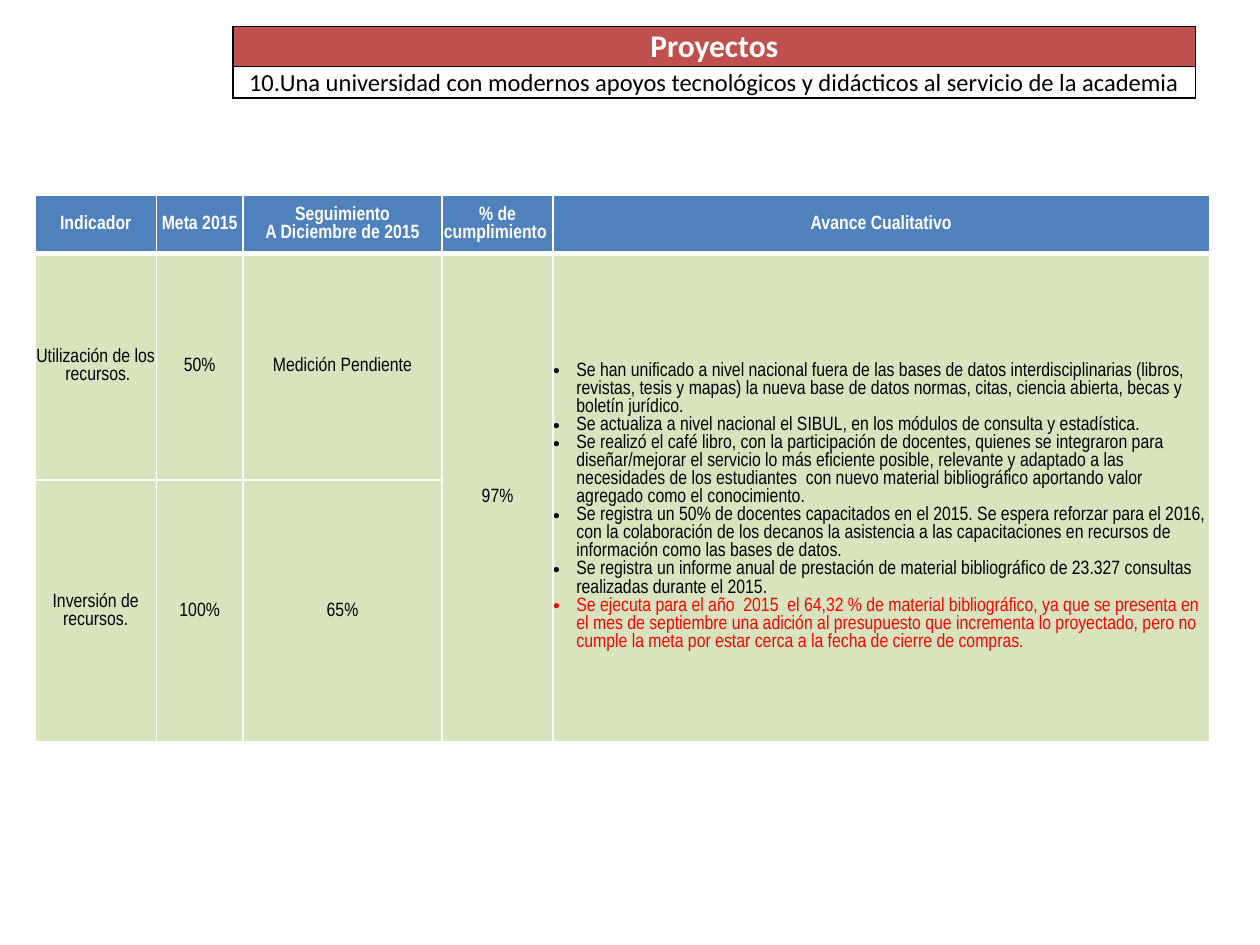
from dataclasses import dataclass

from lxml.etree import SubElement
from pptx import Presentation
from pptx.dml.color import RGBColor
from pptx.enum.text import MSO_ANCHOR as Anchor, PP_ALIGN as Align
from pptx.oxml.ns import qn
from pptx.table import Table, _Cell as Cell
from pptx.util import Cm, Pt

WHITE = RGBColor(0xFF, 0xFF, 0xFF)
BLACK = RGBColor(0x00, 0x00, 0x00)
RED = RGBColor(0xFF, 0x00, 0x00)
BRICK = RGBColor(0xC0, 0x50, 0x4D)
BLUE = RGBColor(0x4F, 0x81, 0xBD)
GREEN = RGBColor(0xD7, 0xE4, 0xBD)

HEADINGS = ["Indicador", "Meta 2015", "Seguimiento\nA Diciembre de 2015",
            "% de cumplimiento ", "Avance Cualitativo"]
ADVANCES = [
    "Se han unificado a nivel nacional fuera de las bases de datos interdisciplinarias "
    "(libros, revistas, tesis y mapas) la nueva base de datos normas, citas, "
    "ciencia abierta, becas y boletín jurídico.",
    "Se actualiza a nivel nacional el SIBUL, en los módulos de consulta y estadística.",
    "Se realizó el café libro, con la participación de docentes, quienes se integraron "
    "para diseñar/mejorar el servicio lo más eficiente posible, relevante y adaptado a las "
    "necesidades de los estudiantes  con nuevo material bibliográfico aportando valor "
    "agregado como el conocimiento.",
    "Se registra un 50% de docentes capacitados en el 2015. Se espera reforzar para el 2016, "
    "con la colaboración de los decanos la asistencia a las capacitaciones en recursos de "
    "información como las bases de datos.",
    "Se registra un informe anual de prestación de material bibliográfico de 23.327 consultas "
    "realizadas durante el 2015.",
    "Se ejecuta para el año  2015  el 64,32 % de material bibliográfico, ya que se presenta en "
    "el mes de septiembre una adición al presupuesto que incrementa lo proyectado, pero no "
    "cumple la meta por estar cerca a la fecha de cierre de compras.",
]
INDICATORS = [
    ["Utilización de los  recursos.", "50%", "Medición Pendiente", "97%", "\n".join(ADVANCES)],
    ["Inversión de recursos.", "100%", "65%"],
]


@dataclass
class CellStyle:
    fill: RGBColor
    color: RGBColor
    font: str
    size: int
    border: RGBColor
    bold: bool = False
    margin: float = 0
    bottom_width: float = 1


PROJECT_HEAD = CellStyle(BRICK, WHITE, "Calibri", 18, BLACK, bold=True, margin=0.03)
PROJECT_NAME = CellStyle(WHITE, BLACK, "Calibri", 14, BLACK, margin=0.03)
HEADING = CellStyle(BLUE, WHITE, "Arial Narrow", 11, WHITE, bold=True, bottom_width=3)
BODY = CellStyle(GREEN, BLACK, "Arial Narrow", 11, WHITE)


def add_grid(shapes, left: float, top: float, widths: list, heights: list) -> Table:
    """Add an unbanded table; all lengths in centimetres."""
    grid = shapes.add_table(len(heights), len(widths), Cm(left), Cm(top),
                            Cm(sum(widths)), Cm(sum(heights))).table
    grid.first_row = grid.horz_banding = False
    for column, width in zip(grid.columns, widths):
        column.width = Cm(width)
    for row, height in zip(grid.rows, heights):
        row.height = Cm(height)
    return grid


def set_borders(cell: Cell, style: CellStyle) -> None:
    properties = cell._tc.get_or_add_tcPr()
    edges = {"a:lnL": 1, "a:lnR": 1, "a:lnT": 1, "a:lnB": style.bottom_width}
    for position, (tag, width) in enumerate(edges.items()):
        line = SubElement(properties, qn(tag), w=str(Pt(width)))
        fill = SubElement(line, qn("a:solidFill"))
        SubElement(fill, qn("a:srgbClr"), val=str(style.border))
        properties.insert(position, line)


def fill_cell(cell: Cell, text: str, style: CellStyle) -> None:
    cell.fill.solid()
    cell.fill.fore_color.rgb = style.fill
    set_borders(cell, style)
    cell.vertical_anchor = Anchor.MIDDLE
    cell.margin_left = cell.margin_right = cell.margin_top = Cm(style.margin)
    cell.margin_bottom = 0
    cell.text_frame.text = text
    for paragraph in cell.text_frame.paragraphs:
        paragraph.alignment = Align.CENTER
        for run in paragraph.runs:
            run.font.name = style.font
            run.font.size = Pt(style.size)
            run.font.bold = style.bold
            run.font.color.rgb = style.color


def make_bullets(cell: Cell) -> None:
    for paragraph in cell.text_frame.paragraphs:
        paragraph.alignment = Align.LEFT
        properties = paragraph._p.get_or_add_pPr()
        properties.set("marL", str(Cm(0.47)))
        properties.set("indent", str(-Cm(0.47)))
        SubElement(properties, qn("a:buFont"), typeface="Arial")
        SubElement(properties, qn("a:buChar"), char="•")


def main() -> None:
    deck = Presentation()
    deck.slide_width, deck.slide_height = Cm(25.4), Cm(19.05)
    slide = deck.slides.add_slide(deck.slide_layouts[6])

    # Project banner
    banner = add_grid(slide.shapes, 4.7, 0.53, [19.4], [0.81, 0.62])
    fill_cell(banner.cell(0, 0), "Proyectos", PROJECT_HEAD)
    fill_cell(banner.cell(1, 0), "10.Una universidad con modernos apoyos tecnológicos "
              "y didácticos al servicio de la academia", PROJECT_NAME)

    # Indicator follow-up
    follow_up = add_grid(slide.shapes, 0.71, 3.94, [2.44, 1.75, 4.01, 2.24, 13.23],
                         [1.17, 4.57, 5.28])
    for row, texts in enumerate([HEADINGS, *INDICATORS]):
        for column, text in enumerate(texts):
            fill_cell(follow_up.cell(row, column), text, BODY if row else HEADING)

    # Compliance and advances cover both indicators
    for column in (3, 4):
        fill_cell(follow_up.cell(2, column), "", BODY)
        follow_up.cell(1, column).merge(follow_up.cell(2, column))
    advances = follow_up.cell(1, 4)
    advances.margin_top = Cm(0.36)
    make_bullets(advances)
    advances.text_frame.paragraphs[-1].runs[0].font.color.rgb = RED

    deck.save("out.pptx")


if __name__ == "__main__":
    main()
